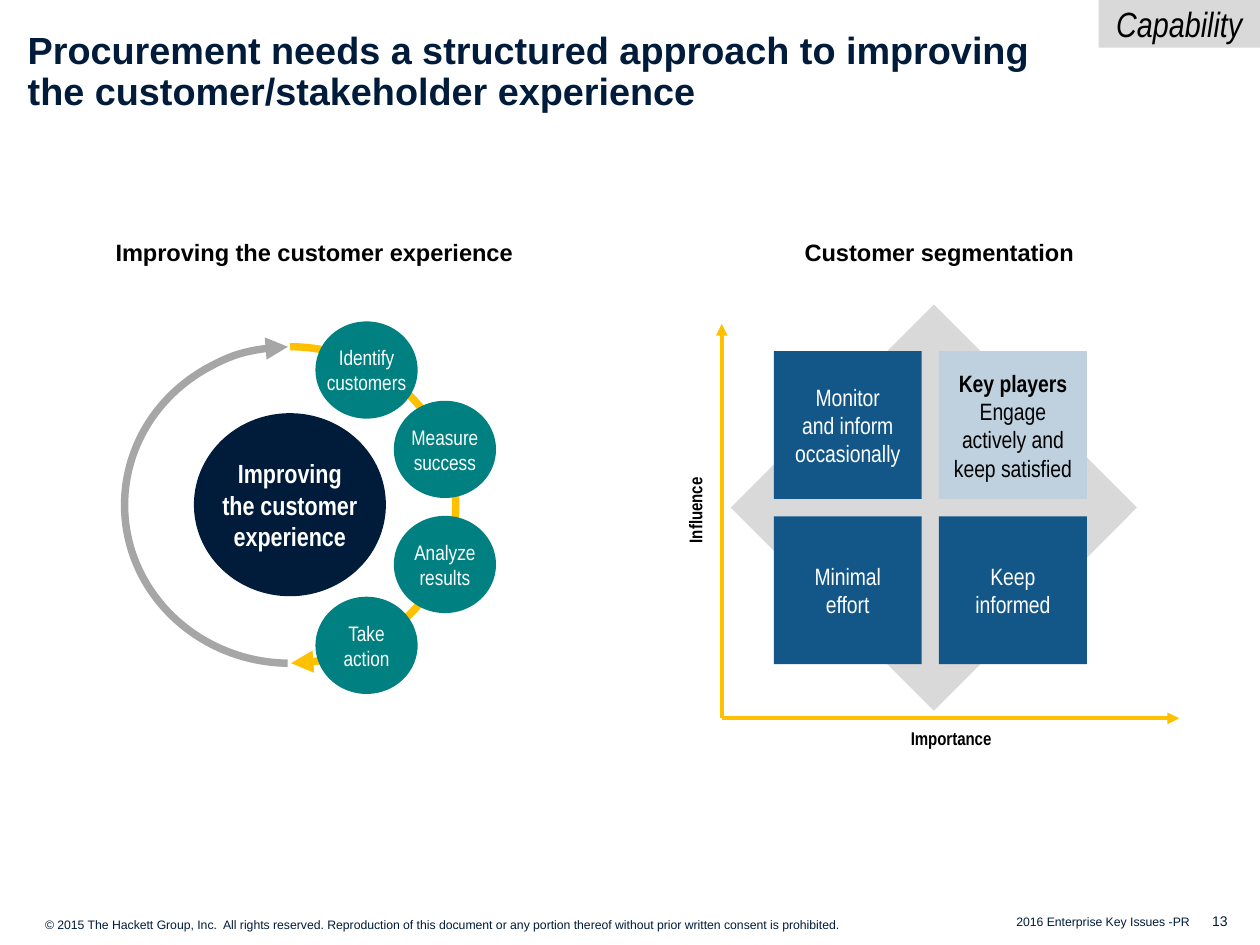
from pptx import Presentation
from pptx.dml.color import RGBColor
from pptx.enum.shapes import MSO_CONNECTOR, MSO_SHAPE
from pptx.enum.text import MSO_ANCHOR, PP_ALIGN
from pptx.oxml.ns import qn
from pptx.util import Cm, Pt
from lxml.etree import SubElement

NAVY, BLUE, PALE, TEAL = "001C3A", "135789", "BFD1DF", "008080"
GOLD, GRAY, LIGHT, WHITE, BLACK = "FFC000", "A6A6A6", "D9D9D9", "FFFFFF", "000000"
NARROW = "Arial Narrow"


def tint(code):
    return RGBColor.from_string(code)


def adorn(item, values):
    for name, value in values.items():
        setattr(item, name, value)


class Deck:
    """Hold the style and the current slide, and draw each kind of element."""

    base = {"name": NARROW, "size": Pt(12), "bold": False, "italic": False}

    def __init__(self):
        self.file = Presentation()
        adorn(self.file, {"slide_width": Cm(25.4), "slide_height": Cm(19.05)})
        self.slide = self.file.slides.add_slide(self.file.slide_layouts[6])

    def label(self, shape, text, color, align=PP_ALIGN.CENTER, space=1.0, lead=False, **font):
        frame = shape.text_frame
        for row, words in enumerate(text.split("\n")):
            para = frame.paragraphs[0] if row == 0 else frame.add_paragraph()
            adorn(para, {"alignment": align, "line_spacing": space})
            run = para.add_run()
            run.text = words
            look = {**self.base, **font}
            if lead and row == 0:
                look["bold"] = True
            adorn(run.font, look)
            run.font.color.rgb = tint(color)

    def text(self, box, text, color, anchor=MSO_ANCHOR.TOP, turn=0, pad=(0.25, 0.13), **style):
        shape = self.slide.shapes.add_textbox(*map(Cm, box))
        shape.rotation = turn
        side, edge = map(Cm, pad)
        adorn(shape.text_frame, {
            "word_wrap": True, "vertical_anchor": anchor, "margin_left": side,
            "margin_right": side, "margin_top": edge, "margin_bottom": edge})
        self.label(shape, text, color, **style)

    def shape(self, kind, box, fill, text="", color=WHITE, turn=0, **style):
        shape = self.slide.shapes.add_shape(kind, *map(Cm, box))
        shape.rotation = turn
        shape.fill.solid()
        shape.fill.fore_color.rgb = tint(fill)
        shape.line.fill.background()
        shape.shadow.inherit = False
        if text:
            adorn(shape.text_frame, {"word_wrap": False, "vertical_anchor": MSO_ANCHOR.MIDDLE})
            self.label(shape, text, color, **style)

    def stroke(self, shape, color, width):
        shape.line.color.rgb = tint(color)
        shape.line.width = Pt(width)
        props = shape.element.spPr
        SubElement(props.find(qn("a:ln")), qn("a:tailEnd"), type="triangle")
        SubElement(props, qn("a:effectLst"))

    def arc(self, box, color, start, end, turn=0):
        shape = self.slide.shapes.add_shape(MSO_SHAPE.ARC, *map(Cm, box))
        shape.adjustments[0], shape.adjustments[1] = start, end
        shape.rotation = turn
        shape.fill.background()
        self.stroke(shape, color, 4.25)

    def arrow(self, start, end):
        line = self.slide.shapes.add_connector(
            MSO_CONNECTOR.STRAIGHT, *map(Cm, start + end))
        self.stroke(line, GOLD, 2.25)


def matrix(deck):
    deck.shape(MSO_SHAPE.RECTANGLE, (15.93, 7.34, 5.79, 5.79), LIGHT, turn=45)
    cells = (
        ("Monitor\nand inform\noccasionally", BLUE, WHITE),
        ("Key players\nEngage\nactively and\nkeep satisfied", PALE, BLACK),
        ("Minimal\neffort", BLUE, WHITE),
        ("Keep\ninformed", BLUE, WHITE))
    side, step = 2.98, 3.33
    for spot, (text, fill, color) in enumerate(cells):
        row, col = divmod(spot, 2)
        box = (15.6 + col * step, 7.08 + row * step, side, side)
        deck.shape(MSO_SHAPE.RECTANGLE, box, fill, text, color,
                   lead=fill == PALE, size=Pt(13.5))
    for end in ((14.55, 6.53), (23.77, 14.48)):
        deck.arrow((14.55, 14.48), end)
    for text, left, top, turn in (("Influence", 12.29, 9.93, 270), ("Importance", 17.45, 14.53, 0)):
        deck.text((left, top, 3.45, 0.71), text, BLACK, turn=turn, size=Pt(10.5), bold=True)


def cycle(deck):
    deck.shape(MSO_SHAPE.OVAL, (3.91, 8.33, 3.87, 3.69), NAVY,
               "Improving\nthe customer\nexperience", size=Pt(15), bold=True)
    ring = (2.51, 6.99, 6.68, 6.38)
    deck.arc(ring, GOLD, 162, 53.79)
    deck.arc(ring, GRAY, 162.56, 53.49, turn=180)
    steps = (("Identify\ncustomers", 6.36, 6.48), ("Measure\nsuccess", 7.94, 8.08),
             ("Analyze\nresults", 7.94, 10.4), ("Take\naction", 6.36, 12.03))
    for text, left, top in steps:
        deck.shape(MSO_SHAPE.OVAL, (left, top, 2.06, 1.96), TEAL, text)


def main():
    deck = Deck()
    deck.text((0.36, 1.12, 21.82, 1.27),
              "Procurement needs a structured approach to improving the customer/stakeholder experience",
              NAVY, anchor=MSO_ANCHOR.BOTTOM, pad=(0.2, 0.1), align=PP_ALIGN.LEFT,
              space=0.9, name="Arial", size=Pt(21.6), bold=True)
    matrix(deck)
    heads = (("Improving the customer experience", 1.98), ("Customer segmentation", 14.58))
    for text, left in heads:
        deck.text((left, 4.7, 8.71, 0.76), text, BLACK, anchor=MSO_ANCHOR.MIDDLE,
                  pad=(0.18, 0.1), name="Arial", size=Pt(13.5), bold=True)
    cycle(deck)
    deck.shape(MSO_SHAPE.RECTANGLE, (22.15, 0, 3.25, 0.96), LIGHT, "Capability", BLACK,
               size=Pt(20), italic=True)
    foot = (
        ("© 2015 The Hackett Group, Inc.  All rights reserved. Reproduction of this document "
         "or any portion thereof without prior written consent is prohibited.",
         (0.66, 18.36, 19.13, 0.56), PP_ALIGN.LEFT, 7),
        ("2016 Enterprise Key Issues -PR", (20.24, 18.31, 4.2, 0.56), PP_ALIGN.LEFT, 7),
        ("13", (23.5, 18.26, 1.5, 0.61), PP_ALIGN.RIGHT, 8))
    for text, box, align, size in foot:
        deck.text(box, text, NAVY, align=align, name="Arial", size=Pt(size))
    deck.file.save("out.pptx")


if __name__ == "__main__":
    main()
